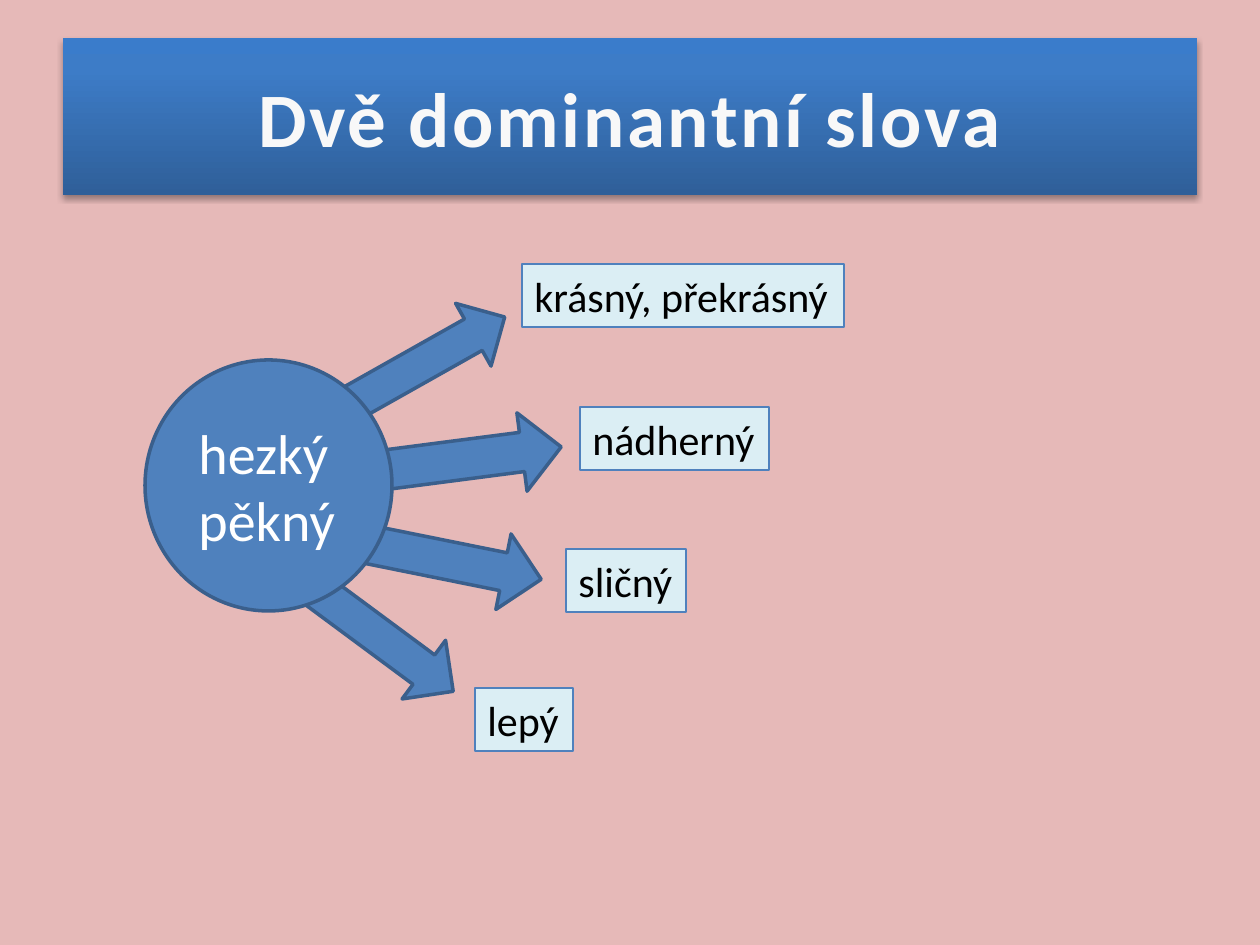
"""Build a slide that links two dominant words to their synonyms."""
from copy import deepcopy

from pptx import Presentation
from pptx.dml.color import RGBColor
from pptx.enum.shapes import MSO_SHAPE
from pptx.enum.text import MSO_ANCHOR, MSO_AUTO_SIZE, PP_ALIGN
from pptx.oxml import parse_xml
from pptx.oxml.ns import nsdecls, qn
from pptx.util import Emu, Pt

ARROW, OVAL = MSO_SHAPE.RIGHT_ARROW, MSO_SHAPE.OVAL
MIDDLE, CENTER = MSO_ANCHOR.MIDDLE, PP_ALIGN.CENTER
FIT_TEXT = MSO_AUTO_SIZE.SHAPE_TO_FIT_TEXT

PINK = RGBColor(0xE6, 0xB9, 0xB8)
BLUE = RGBColor(0x4F, 0x81, 0xBD)
OUTLINE = RGBColor(0x3A, 0x5F, 0x8C)
PALE = RGBColor(0xDB, 0xEE, 0xF4)
OFF_WHITE = RGBColor(0xF8, 0xF8, 0xF8)
WHITE = RGBColor(0xFF, 0xFF, 0xFF)
BLACK = RGBColor(0, 0, 0)
BANNER_STOPS = [
    (0, RGBColor(0x2F, 0x5F, 0x99)),
    (0.8, RGBColor(0x3D, 0x7C, 0xC7)),
    (1, RGBColor(0x3A, 0x7C, 0xCB)),
]
FONT = "Calibri"
PX_PER_INCH = 126


def px(*lengths):
    return [Emu(round(length * 914400 / PX_PER_INCH)) for length in lengths]


def add_words(slide, box, words, size, color):
    label = slide.shapes.add_textbox(*px(*box))
    frame = label.text_frame
    frame.word_wrap = False
    frame.auto_size = FIT_TEXT
    frame.text = "\n".join(words)
    for paragraph in frame.paragraphs:
        paragraph.font.name = FONT
        paragraph.font.size = Pt(size)
        paragraph.font.color.rgb = color
    return label


prs = Presentation()
prs.slide_width, prs.slide_height = px(1260, 945)
slide = prs.slides.add_slide(prs.slide_layouts[5])
slide.background.fill.solid()
slide.background.fill.fore_color.rgb = PINK

title = slide.shapes.title
title.left, title.top, title.width, title.height = px(63, 38, 1134, 157)
title.fill.gradient()
title.fill.gradient_angle = 90
first_stop = title.element.spPr.find(".//" + qn("a:gs"))
first_stop.addnext(deepcopy(first_stop))
for stop, (position, color) in zip(title.fill.gradient_stops, BANNER_STOPS):
    stop.position = position
    stop.color.rgb = color
title.element.spPr.append(parse_xml(
    f'<a:effectLst {nsdecls("a")}>'
    '<a:outerShdw blurRad="39370" dist="22860" dir="5400000" rotWithShape="0">'
    '<a:srgbClr val="000000"><a:alpha val="35000"/></a:srgbClr>'
    '</a:outerShdw></a:effectLst>'
))
title.text_frame.text = "Dvě dominantní slova"
title.text_frame.vertical_anchor = MIDDLE
heading = title.text_frame.paragraphs[0]
heading.alignment = CENTER
heading.font.name = FONT
heading.font.size = Pt(44)
heading.font.bold = True
heading.font.color.rgb = OFF_WHITE
heading.runs[0].font._element.set("spc", "150")

diagram = [
    (ARROW, (299, 604, 171, 73), 36.5),
    (ARROW, (363, 523, 180, 77), 11.4),
    (ARROW, (367, 420, 195, 79), 352.6),
    (ARROW, (341, 324, 175, 72), 330.6),
    (OVAL, (145, 360, 247, 251), 0),
]
for kind, box, angle in diagram:
    part = slide.shapes.add_shape(kind, *px(*box))
    part.rotation = angle
    part.shadow.inherit = False
    part.fill.solid()
    part.fill.fore_color.rgb = BLUE
    part.line.color.rgb = OUTLINE
    part.line.width = Pt(2)

dominant = add_words(slide, (186, 412, 172, 149), ["hezký", "pěkný"], 32, WHITE)
dominant.text_frame.word_wrap = True

synonyms = [
    ("krásný, překrásný", 522, 264, 322),
    ("nádherný", 580, 407, 189),
    ("sličný", 566, 549, 120),
    ("lepý", 475, 688, 98),
]
for word, left, top, width in synonyms:
    label = add_words(slide, (left, top, width, 63), [word], 24, BLACK)
    label.fill.solid()
    label.fill.fore_color.rgb = PALE
    label.line.color.rgb = BLUE
    label.line.width = Pt(0.75)

prs.save("out.pptx")
